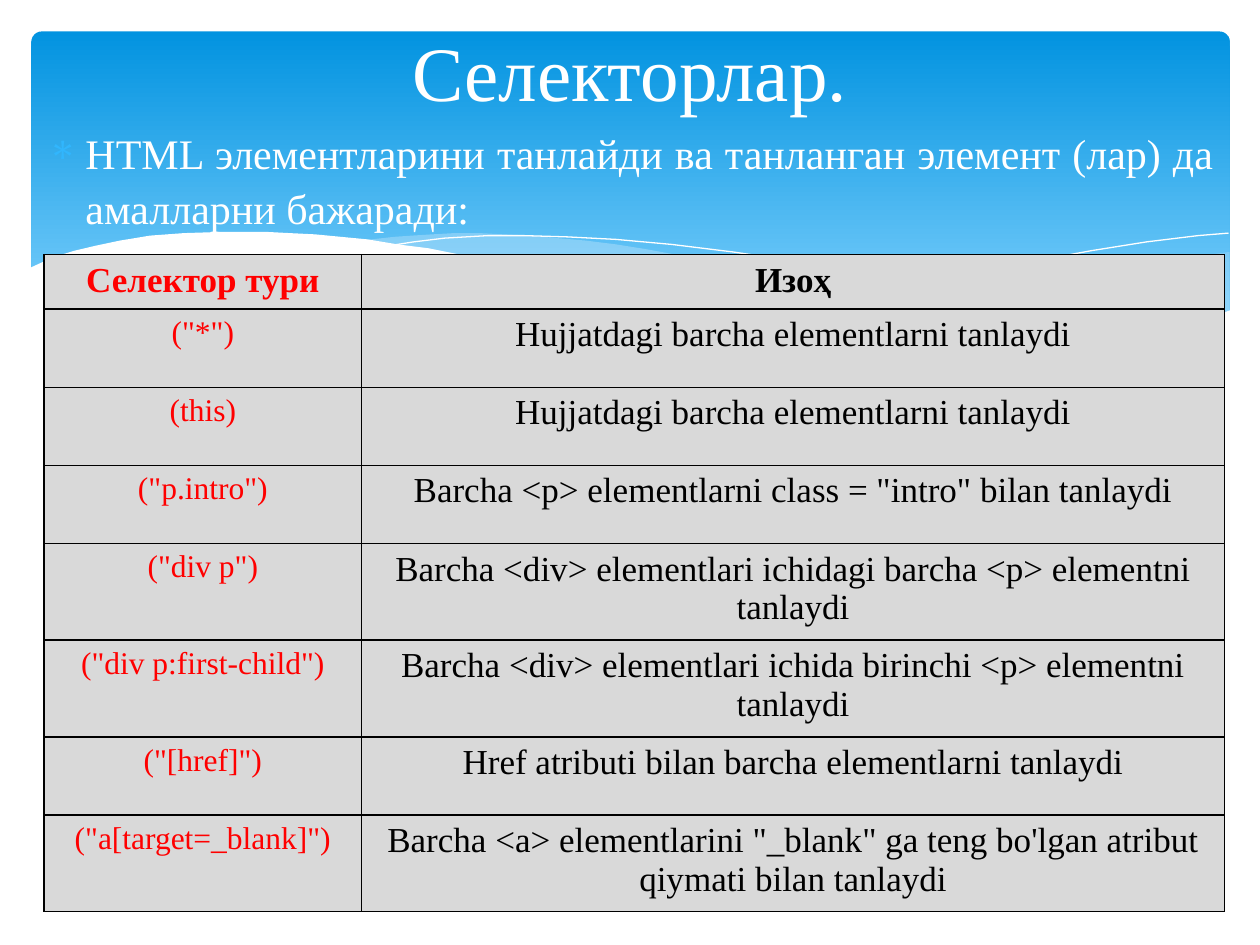
import dataclasses

import pptx
import pptx.dml.color
import pptx.enum.shapes
import pptx.enum.text
import pptx.oxml
import pptx.oxml.ns
import pptx.util

COLS, ROWS = 100, 75
CELL = pptx.util.Inches(10) // COLS
ALIGN = pptx.enum.text.PP_ALIGN


@dataclasses.dataclass(frozen=True)
class Theme:
    font: str = "Times New Roman"
    white: str = "FFFFFF"
    black: str = "000000"
    red: str = "FF0000"
    gray: str = "D9D9D9"
    deep: str = "0293E0"
    light: str = "83D3FE"
    mist: str = "C6E7FC"
    mark: str = "31B6FD"
    title: int = 44
    lead: int = 24
    note: int = 20
    code: int = 18
    rule: int = 1


THEME = Theme()

# Wave points: columns and rows from the corner of the wave box.
RIGHT = [(97.5, 2), (94.8, 2.4), (92.1, 3), (89.1, 3.6), (86.1, 4.3), (80.5, 5.7),
         (75.3, 6.8), (70.6, 7.7), (66.1, 8.5), (69.1, 8.9), (71.9, 9.2), (74.5, 9.5),
         (76.9, 9.7), (80.3, 9.8), (83.5, 9.7), (86.3, 9.5), (88.9, 9.2), (91.3, 8.7),
         (93.5, 8.2), (96.3, 7.2), (97.6, 6.7), (97.6, 2)]
MIDDLE = [(89.3, 9.3), (86.6, 8.9), (83.7, 8.5), (80.7, 8), (77.5, 7.4), (74.1, 6.7),
          (70.6, 6), (66.8, 5.1), (62.9, 4.2), (59.8, 3.4), (56.9, 2.8), (54.1, 2.3),
          (51.4, 1.8), (48.9, 1.4), (46.5, 1.1), (44.2, 0.9), (42, 0.7), (39.9, 0.6),
          (38, 0.5), (36.1, 0.5), (34.4, 0.6), (32.8, 0.7), (31.3, 0.8), (28.6, 1.1),
          (32.3, 1.6), (36.2, 2.3), (40.4, 3.1), (44.9, 4.2), (49.1, 5.2), (53, 6),
          (56.6, 6.8), (60.1, 7.5), (63.4, 8.1), (66.5, 8.6), (69.5, 9), (72.2, 9.4),
          (74.8, 9.6), (77.3, 9.7), (79.6, 9.8), (82.8, 9.8), (85.7, 9.7), (87.6, 9.5)]
LONG = [(30.9, 1.5), (32.8, 1.2), (35.3, 0.9), (38.7, 0.7), (41.6, 0.7), (45, 0.8),
        (48.9, 1), (53.3, 1.4), (58.2, 2), (63.6, 2.8), (69.5, 3.9), (76, 5.3),
        (83.1, 7.1), (90.7, 9.2)]
SHORT = [(61.3, 7.7), (65.3, 6.6), (69.5, 5.5), (74.8, 4.3), (80.6, 3), (86.6, 1.9),
         (91, 1.2), (95.1, 0.7), (97.5, 0.5)]
FRONT = [(97.7, 6.6), (95, 7.6), (92, 8.5), (89.9, 8.9), (87.5, 9.3), (85, 9.5),
         (82.3, 9.7), (79.3, 9.6), (76.1, 9.5), (72.6, 9.2), (68.8, 8.8), (64.8, 8.2),
         (60.3, 7.4), (55.5, 6.5), (50.3, 5.3), (44.7, 4), (41.8, 3.3), (39.1, 2.7),
         (36.5, 2.2), (34, 1.7), (31.6, 1.4), (29.2, 1), (27.1, 0.8), (25, 0.6),
         (23, 0.5), (21.1, 0.4), (17.7, 0.4), (14.6, 0.5), (11.9, 0.7), (9.5, 1.1),
         (7.6, 1.5), (5.9, 1.9), (4.6, 2.3), (3.6, 2.7), (2.3, 3.3), (2.3, 14.9),
         (97.7, 14.9)]

TABLE = [
    ("Селектор тури", "Изоҳ"),
    ('("*")', "Hujjatdagi barcha elementlarni tanlaydi"),
    ("(this)", "Hujjatdagi barcha elementlarni tanlaydi"),
    ('("p.intro")', 'Barcha <p> elementlarni class = "intro" bilan tanlaydi'),
    ('("div p")', "Barcha <div> elementlari ichidagi barcha <p> elementni tanlaydi"),
    ('("div p:first-child")', "Barcha <div> elementlari ichida birinchi <p> elementni tanlaydi"),
    ('("[href]")', "Href atributi bilan barcha elementlarni tanlaydi"),
    ('("a[target=_blank]")',
     "Barcha <a> elementlarini \"_blank\" ga teng bo'lgan atribut qiymati bilan tanlaydi"),
]


def size(cells):
    return pptx.util.Emu(round(cells * CELL))


def place(box):
    return [size(part) for part in box]


def tint(text):
    return pptx.dml.color.RGBColor.from_string(text)


def node(xml):
    return pptx.oxml.parse_xml(xml.replace(">", f" {pptx.oxml.ns.nsdecls('a')}>", 1))


def write(para, text, points, color, align=ALIGN.CENTER, bold=False):
    para.alignment = align
    run = para.add_run()
    run.text = text
    font = run.font
    font.name, font.size, font.bold = THEME.font, pptx.util.Pt(points), bold
    font.color.rgb = tint(color)


def panel(slide, box):
    shape = slide.shapes.add_shape(
        pptx.enum.shapes.MSO_SHAPE.ROUNDED_RECTANGLE, *place(box))
    shape.adjustments[0] = 0.03
    shape.shadow.inherit = False
    shape.line.fill.background()
    shape.fill.gradient()
    shape.fill.gradient_angle = 270
    stops = zip(shape.fill.gradient_stops, (THEME.deep, THEME.light), (0, 0.9))
    for stop, color, spot in stops:
        stop.color.rgb, stop.position = tint(color), spot


def trace(slide, box, points, closed):
    """Draw points, given in cells from the corner of the box."""
    left, top = box[:2]
    spots = [(size(left + x), size(top + y)) for x, y in points]
    pen = slide.shapes.build_freeform(*spots[0])
    pen.add_line_segments(spots[1:], close=closed)
    shape = pen.convert_to_shape()
    shape.shadow.inherit = False
    return shape


def waves(slide, box):
    def fill(points, color, alpha=100):
        shape = trace(slide, box, points, True)
        shape.line.fill.background()
        shape.fill.solid()
        shape.fill.fore_color.rgb = tint(color)
        if alpha < 100:
            tone = shape.fill._xPr.find(".//" + pptx.oxml.ns.qn("a:srgbClr"))
            tone.append(node(f'<a:alpha val="{alpha * 1000}"></a:alpha>'))

    fill(RIGHT, THEME.mist, 29)
    fill(MIDDLE, THEME.mist, 40)
    for points in (LONG, SHORT):
        shape = trace(slide, box, points, False)
        shape.fill.background()
        shape.line.color.rgb = tint(THEME.white)
        shape.line.width = pptx.util.Pt(0)
    fill(FRONT, THEME.white)


def frame(slide, box):
    text = slide.shapes.add_textbox(*place(box)).text_frame
    text.word_wrap = True
    return text


def title(slide, box):
    text = frame(slide, box)
    text.vertical_anchor = pptx.enum.text.MSO_ANCHOR.MIDDLE
    write(text.paragraphs[0], "Селекторлар.", THEME.title, THEME.white)


def lead(slide, box):
    para = frame(slide, box).paragraphs[0]
    props = para._p.get_or_add_pPr()
    props.set("marL", str(size(3)))
    props.set("indent", str(size(-3)))
    for xml in (f'<a:buClr><a:srgbClr val="{THEME.mark}"/></a:buClr>',
                '<a:buFont typeface="Symbol"></a:buFont>',
                '<a:buChar char="∗"></a:buChar>'):
        props.append(node(xml))
    para.line_spacing = 1.1
    write(para, "HTML элементларини танлайди ва танланган элемент (лар) да "
          "амалларни бажаради:", THEME.lead, THEME.white, ALIGN.JUSTIFY)


def paint(cell):
    """Give a cell its borders, then its fill, as the schema orders them."""
    props = cell._tc.get_or_add_tcPr()
    width = pptx.util.Pt(THEME.rule)
    for side in "LRTB":
        props.append(node(f'<a:ln{side} w="{width}"><a:solidFill><a:srgbClr '
                          f'val="{THEME.black}"/></a:solidFill></a:ln{side}>'))
    cell.fill.solid()
    cell.fill.fore_color.rgb = tint(THEME.gray)


def table(slide, box, first=25.2, head=3.9):
    """Fill the box; first is the left column's width, head the top row's height."""
    grid = slide.shapes.add_table(len(TABLE), 2, *place(box)).table
    grid.first_row = grid.horz_banding = False
    wide, high = box[2:]
    for col, width in zip(grid.columns, (first, wide - first)):
        col.width = size(width)
    for i, pair in enumerate(TABLE):
        grid.rows[i].height = size((high - head) / (len(TABLE) - 1) if i else head)
        left = THEME.code if i else THEME.note
        looks = ((left, THEME.red), (THEME.note, THEME.black))
        for j, (text, look) in enumerate(zip(pair, looks)):
            cell = grid.cell(i, j)
            paint(cell)
            write(cell.text_frame.paragraphs[0], text, *look, bold=i == 0)


def main():
    deck = pptx.Presentation()
    deck.slide_width, deck.slide_height = size(COLS), size(ROWS)
    slide = deck.slides.add_slide(deck.slide_layouts[6])
    panel(slide, (2.5, 2.5, 95.1, 27))
    waves(slide, (0, 18, COLS, 15))
    lead(slide, (2.8, 9.2, 94.5, 8.7))
    title(slide, (5, 2.1, 90, 7))
    table(slide, (3.5, 20.2, 93.7, 47.3))
    deck.save("out.pptx")


if __name__ == "__main__":
    main()
